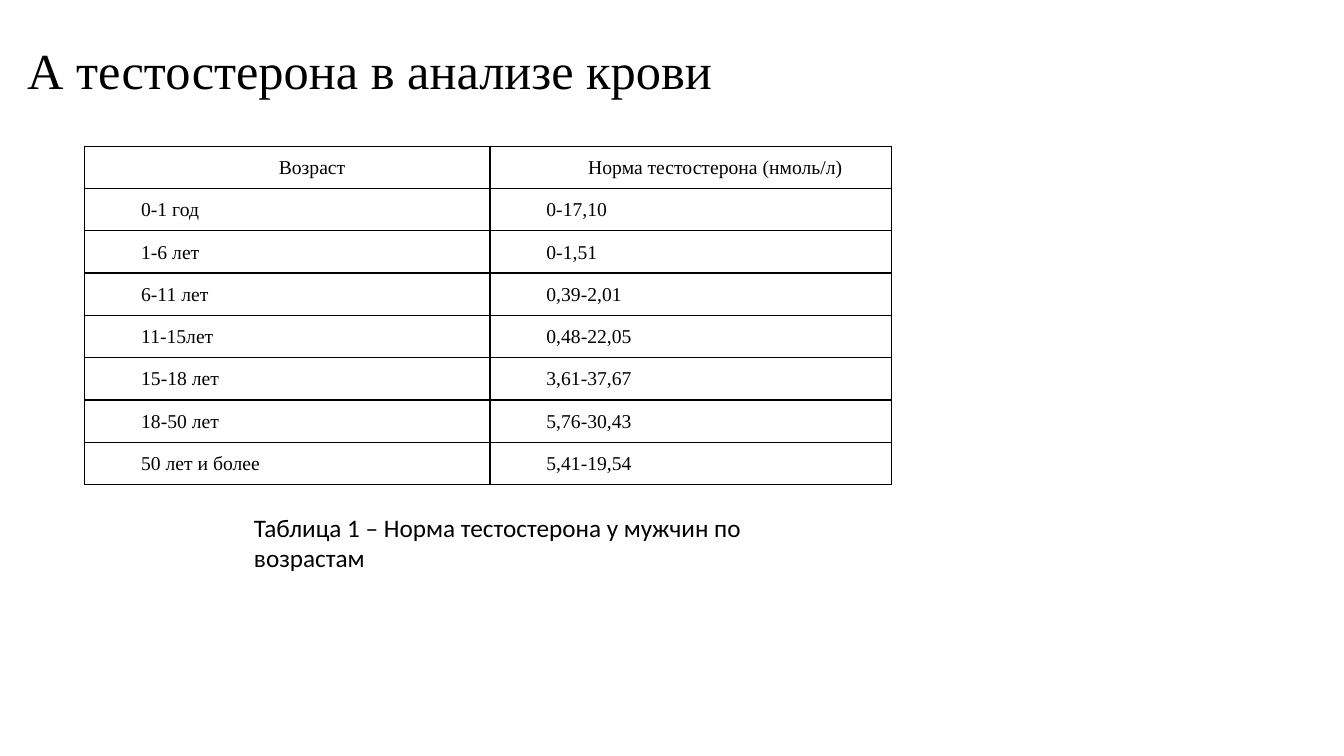
from lxml import etree
from pptx import Presentation
from pptx.dml.color import RGBColor
from pptx.enum import text
from pptx.oxml.ns import qn
from pptx.util import Inches, Pt

BLACK = RGBColor(0x00, 0x00, 0x00)
SERIF = "Times New Roman"

NORMS = [
    ("Возраст", "Норма тестостерона (нмоль/л)"),
    ("0-1 год", "0-17,10"),
    ("1-6 лет", "0-1,51"),
    ("6-11 лет", "0,39-2,01"),
    ("11-15лет", "0,48-22,05"),
    ("15-18 лет", "3,61-37,67"),
    ("18-50 лет", "5,76-30,43"),
    ("50 лет и более", "5,41-19,54"),
]


def write(frame, wording, font=SERIF, size=14, align=None, spacing=None, indent=0):
    """Fill a text frame with one paragraph; indent is for its first line, in inches."""
    frame.word_wrap = True
    paragraph = frame.paragraphs[0]
    paragraph.alignment = align
    paragraph.line_spacing = spacing
    if indent:
        properties = paragraph._p.get_or_add_pPr()
        properties.set("marL", "0")
        properties.set("indent", str(Inches(indent)))
    run = paragraph.add_run()
    run.text = wording
    run.font.name = font
    run.font.size = Pt(size)
    run.font.color.rgb = BLACK


def add_borders(cell, width=1):
    properties = cell._tc.get_or_add_tcPr()
    for position, side in enumerate(("lnL", "lnR", "lnT", "lnB")):
        line = etree.Element(qn(f"a:{side}"), w=str(Pt(width)))
        fill = etree.SubElement(line, qn("a:solidFill"))
        etree.SubElement(fill, qn("a:srgbClr"), val=str(BLACK))
        properties.insert(position, line)


def add_title(slide, left, top, width, height):
    title = slide.shapes.add_textbox(left, top, width, height).text_frame
    title.vertical_anchor = text.MSO_ANCHOR.MIDDLE
    write(title, "А тестостерона в анализе крови", size=36, spacing=0.9)


def add_norms_table(slide, left, top, width, height):
    table = slide.shapes.add_table(
        len(NORMS), len(NORMS[0]), left, top, width, height).table
    table.first_row = table.horz_banding = False
    age_width = Inches(4.02)
    table.columns[0].width = age_width
    table.columns[1].width = width - age_width
    for row, norm in enumerate(NORMS):
        align = text.PP_ALIGN.JUSTIFY if row else text.PP_ALIGN.CENTER
        for column, wording in enumerate(norm):
            cell = table.cell(row, column)
            cell.margin_left = cell.margin_right = Inches(0.07)
            cell.margin_top = cell.margin_bottom = 0
            cell.fill.background()
            add_borders(cell)
            write(cell.text_frame, wording, align=align, spacing=1.5, indent=0.49)


def add_caption(slide, left, top, width, height):
    caption = slide.shapes.add_textbox(left, top, width, height).text_frame
    write(caption, "Таблица 1 – Норма тестостерона у мужчин по возрастам",
          font="Calibri", size=18)
    caption.auto_size = text.MSO_AUTO_SIZE.SHAPE_TO_FIT_TEXT


def main():
    deck = Presentation()
    deck.slide_width, deck.slide_height = Inches(13.33), Inches(7.5)
    slide = deck.slides.add_slide(deck.slide_layouts[6])
    add_title(slide, Inches(0.17), Inches(0), Inches(11.5), Inches(1.45))
    add_norms_table(slide, Inches(0.84), Inches(1.45), Inches(8), Inches(3.36))
    add_caption(slide, Inches(2.42), Inches(5.03), Inches(5.09), Inches(0.71))
    deck.save("out.pptx")


if __name__ == "__main__":
    main()
